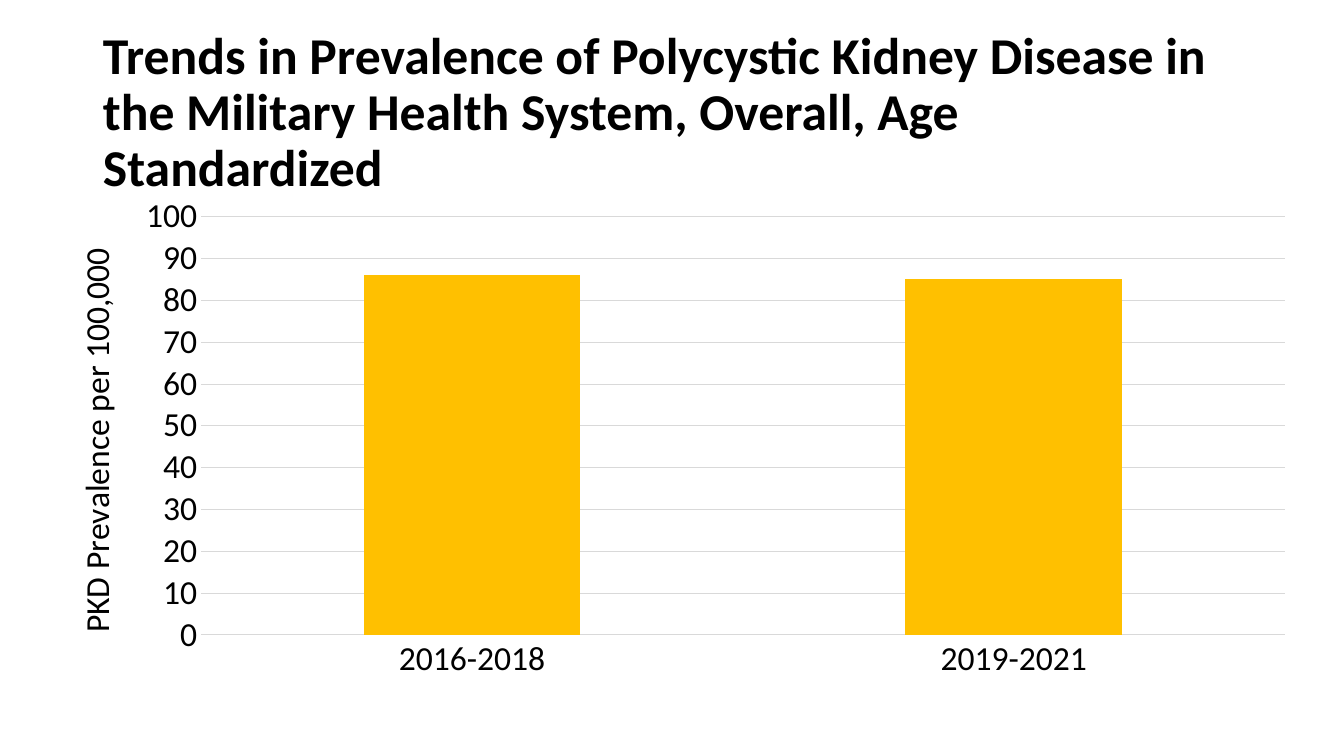
from lxml.etree import SubElement
from pptx import Presentation
from pptx.chart.data import CategoryChartData
from pptx.dml.color import RGBColor
from pptx.enum.chart import XL_CHART_TYPE as ChartType, XL_TICK_MARK as TickMark
from pptx.enum.text import MSO_ANCHOR as Anchor, MSO_AUTO_SIZE as AutoSize, PP_ALIGN as Align
from pptx.oxml.ns import qn
from pptx.util import Cm, Pt

TITLE = ("Trends in Prevalence of Polycystic Kidney Disease in the Military "
         "Health System, Overall, Age Standardized")
AXIS_TITLE = "PKD Prevalence per 100,000"
PREVALENCE = {"2016-2018": 86, "2019-2021": 85}
COLORS = {"text": "000000", "grid": "D9D9D9", "bar": "FFC000"}
FONT = "Calibri"
TITLE_BOX = (Cm(2.34), Cm(1.02), Cm(29.21), Cm(3.68))
CHART_BOX = (Cm(1.07), Cm(4.7), Cm(31.75), Cm(12.7))
PLOT_LAYOUT = {"layoutTarget": "inner", "xMode": "edge", "yMode": "edge",
               "x": 0.126, "y": 0.06, "w": 0.86, "h": 0.83}
AXIS_TITLE_LAYOUT = {"xMode": "edge", "yMode": "edge", "x": 0.02, "y": 0.11}


def color(name):
    return RGBColor.from_string(COLORS[name])


def style_font(font, size, bold):
    font.name = FONT
    font.size = Pt(size)
    font.bold = bold
    font.color.rgb = color("text")


def style_line(line):
    line.color.rgb = color("grid")
    line.width = Pt(0.75)


def set_layout(element, position, values):
    for old_layout in element.findall(qn("c:layout")):
        element.remove(old_layout)
    layout = SubElement(element, qn("c:layout"))
    element.insert(position, layout)
    manual = SubElement(layout, qn("c:manualLayout"))
    for name, value in values.items():
        SubElement(manual, qn(f"c:{name}")).set("val", str(value))


def add_title(slide):
    title = slide.shapes.title
    title.left, title.top, title.width, title.height = TITLE_BOX
    frame = title.text_frame
    frame.text = TITLE
    frame.word_wrap = True
    frame.auto_size = AutoSize.NONE
    frame.vertical_anchor = Anchor.MIDDLE
    paragraph = frame.paragraphs[0]
    paragraph.alignment = Align.LEFT
    paragraph.line_spacing = 0.9
    style_font(paragraph.runs[0].font, 36.9, True)


def add_prevalence_chart(slide):
    data = CategoryChartData()
    data.categories = list(PREVALENCE)
    data.add_series("Series 1", list(PREVALENCE.values()))
    chart = slide.shapes.add_chart(ChartType.COLUMN_CLUSTERED, *CHART_BOX, data).chart
    chart.has_legend = False
    chart.has_title = False
    style_font(chart.font, 24, False)

    plot = chart.plots[0]
    plot.gap_width = 150
    plot.vary_by_categories = False
    fill = plot.series[0].format.fill
    fill.solid()
    fill.fore_color.rgb = color("bar")

    for axis in (chart.category_axis, chart.value_axis):
        axis.major_tick_mark = axis.minor_tick_mark = TickMark.NONE
        style_font(axis.tick_labels.font, 24, False)
    style_line(chart.category_axis.format.line)

    value_axis = chart.value_axis
    value_axis.minimum_scale = 0
    value_axis.maximum_scale = 100
    value_axis.major_unit = 10
    value_axis.format.line.fill.background()
    style_line(value_axis.major_gridlines.format.line)
    frame = value_axis.axis_title.text_frame
    frame.text = AXIS_TITLE
    style_font(frame.paragraphs[0].runs[0].font, 24, False)

    title_element = value_axis.axis_title.format._element
    set_layout(title_element, 1, AXIS_TITLE_LAYOUT)
    set_layout(title_element.getparent().getparent(), 0, PLOT_LAYOUT)


def main():
    presentation = Presentation()
    presentation.slide_width = Cm(33.87)
    presentation.slide_height = Cm(19.05)
    slide = presentation.slides.add_slide(presentation.slide_layouts[5])
    add_title(slide)
    add_prevalence_chart(slide)
    presentation.save("out.pptx")


if __name__ == "__main__":
    main()
